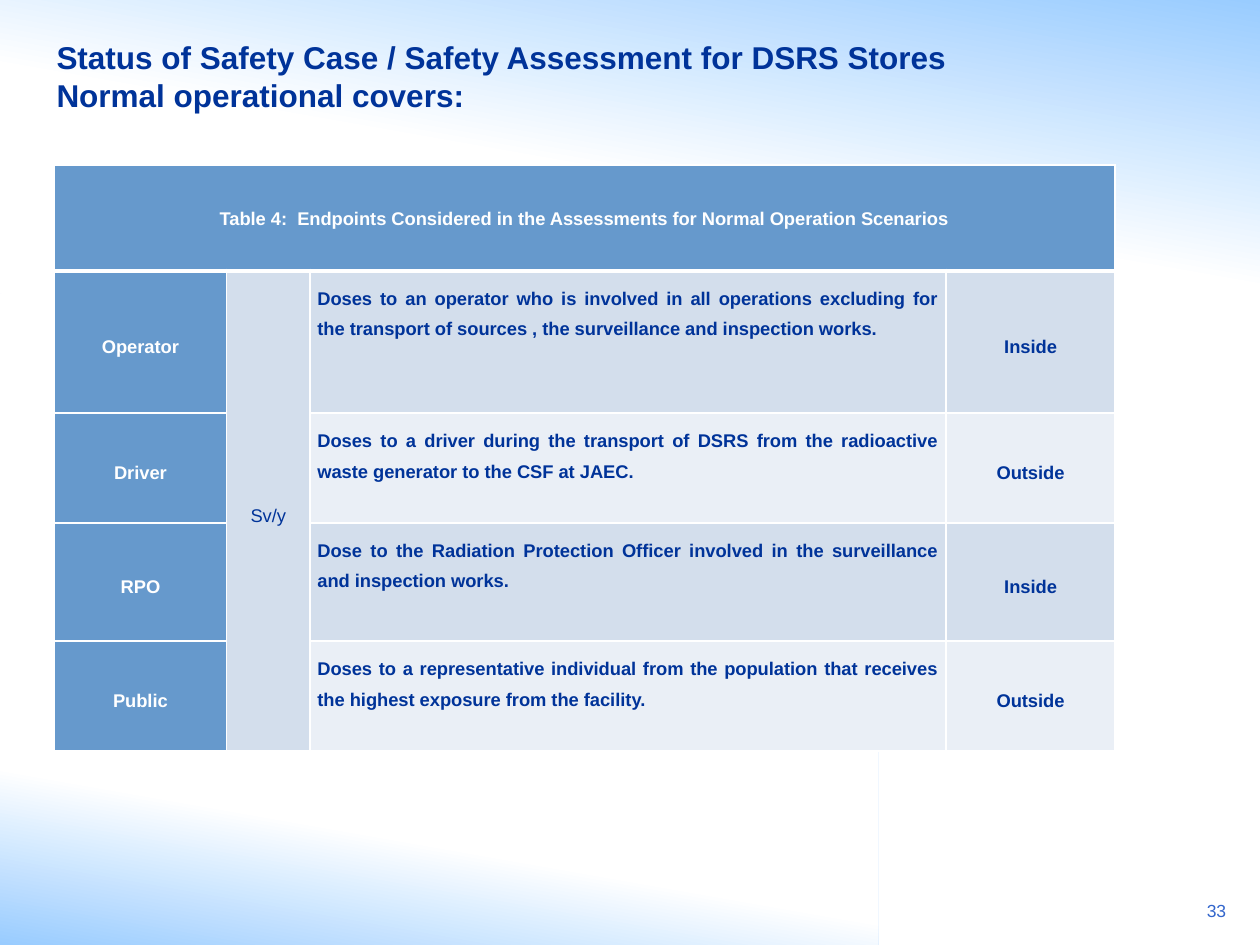
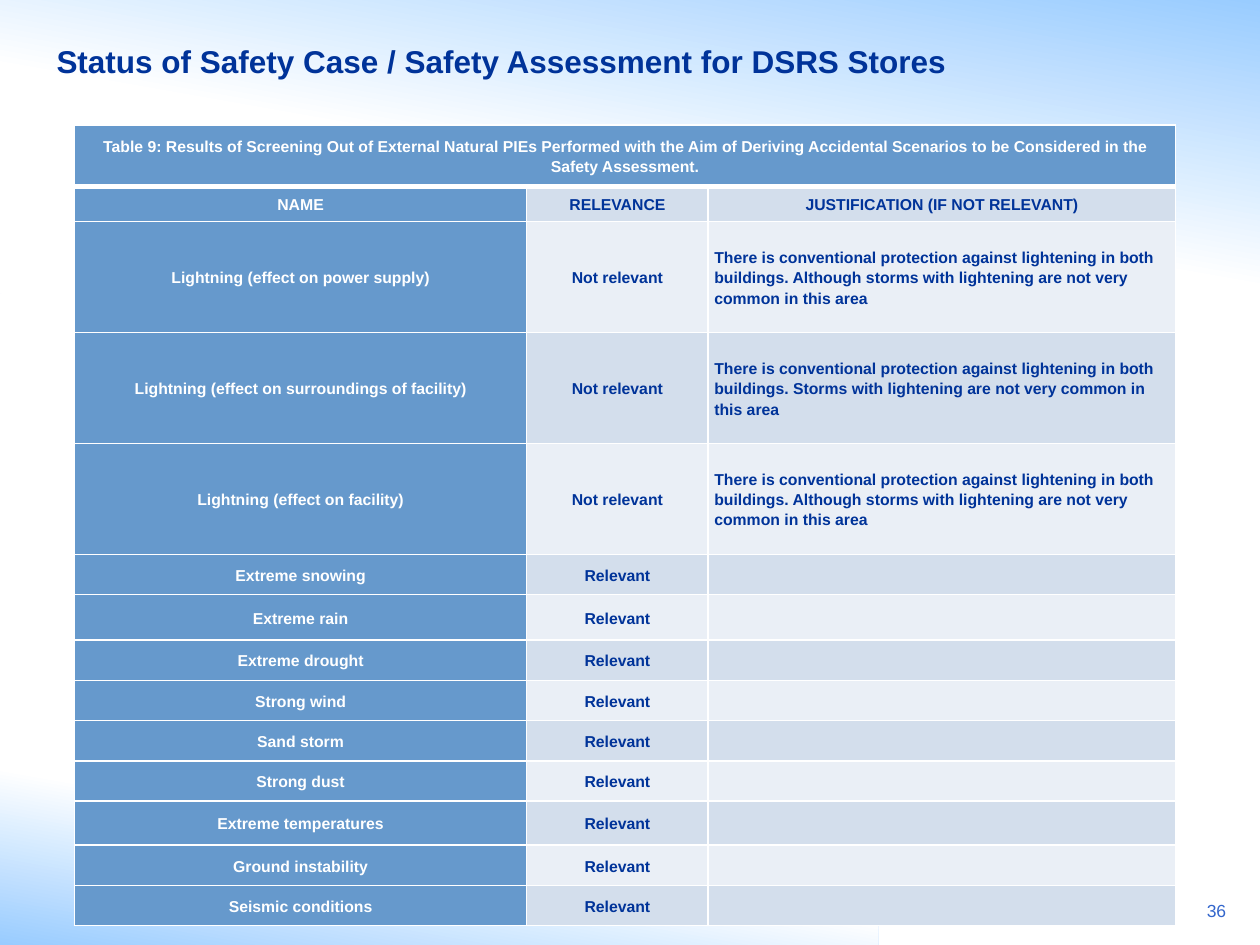
"""Build two slides of safety assessment tables."""
from dataclasses import dataclass

from lxml.etree import SubElement
from pptx import Presentation
from pptx.dml.color import RGBColor
from pptx.enum.shapes import MSO_SHAPE
from pptx.enum.text import MSO_ANCHOR, PP_ALIGN
from pptx.oxml.ns import qn
from pptx.slide import Slide
from pptx.table import _Cell
from pptx.util import Inches, Pt

FONT = "Arial"
COLORS = {
    "sky": "99CCFF",
    "white": "FFFFFF",
    "navy": "003399",
    "number": "3366CC",
    "header": "6699CC",
    "band_dark": "D3DEEC",
    "band_light": "EAEFF6",
}
TITLE = "Status of Safety Case / Safety Assessment for DSRS Stores"


@dataclass(frozen=True)
class Band:
    top: float
    width: float
    height: float
    angle: float
    fade_end: float


@dataclass(frozen=True)
class TextStyle:
    size: float
    color: str = "navy"
    bold: bool = True
    align: PP_ALIGN = PP_ALIGN.CENTER
    spacing: float = 1.0


@dataclass(frozen=True)
class Column:
    width: float
    align: PP_ALIGN = PP_ALIGN.CENTER
    anchor: MSO_ANCHOR = MSO_ANCHOR.MIDDLE
    bold: bool = True


@dataclass(frozen=True)
class TableSpec:
    left: float
    top: float
    caption: str
    columns: list[Column]
    heights: list[float]
    rows: list[tuple[str, ...]]
    size: float
    spacing: float
    inset: float
    tall_column: int | None = None


@dataclass(frozen=True)
class Page:
    number: int
    title: str
    title_top: float
    table: TableSpec


BANDS = [Band(5.8, 6.97, 1.7, 80, 0.48), Band(0, 10, 2.33, 260, 0.56)]

ENDPOINTS = TableSpec(
    0.43, 1.31,
    "Table 4:  Endpoints Considered in the Assessments for Normal Operation Scenarios",
    [
        Column(1.37),
        Column(0.66, bold=False),
        Column(5.05, PP_ALIGN.JUSTIFY, MSO_ANCHOR.TOP),
        Column(1.34),
    ],
    [0.84, 1.13, 0.87, 0.94, 0.87],
    [
        ("Operator", "Sv/y",
         "Doses to an operator who is involved in all operations excluding for the "
         "transport of sources , the surveillance and inspection works.", "Inside"),
        ("Driver", "",
         "Doses to a driver during the transport of DSRS from the radioactive "
         "waste generator to the CSF at JAEC.", "Outside"),
        ("RPO", "",
         "Dose to the Radiation Protection Officer involved in the surveillance "
         "and inspection works.", "Inside"),
        ("Public", "",
         "Doses to a representative individual from the population that receives "
         "the highest exposure from the facility.", "Outside"),
    ],
    size=10.5, spacing=1.5, inset=0.06, tall_column=1,
)

PROTECTION = "There is conventional protection against lightening in both buildings. "
ALTHOUGH = PROTECTION + "Although storms with lightening are not very common in this area"
STORMS = PROTECTION + "Storms with lightening are not very common in this area"
LIGHTNING = [("power supply", ALTHOUGH), ("surroundings of facility", STORMS),
             ("facility", ALTHOUGH)]
RELEVANT = [
    "Extreme snowing", "Extreme rain", "Extreme drought", "Strong wind", "Sand storm",
    "Strong dust", "Extreme temperatures", "Ground instability", "Seismic conditions",
]

SCREENING = TableSpec(
    0.59, 0.99,
    "Table 9: Results of Screening Out of External Natural PIEs Performed with the Aim "
    "of Deriving Accidental Scenarios to be Considered in the Safety Assessment.",
    [Column(3.59), Column(1.44), Column(3.71, PP_ALIGN.LEFT)],
    [0.49, 0.28] + [0.88] * 3 + [0.32, 0.36] + [0.32] * 4 + [0.35] + [0.32] * 2,
    [("NAME", "RELEVANCE", "JUSTIFICATION (IF NOT RELEVANT)")]
    + [(f"Lightning (effect on {target})", "Not relevant", reason)
       for target, reason in LIGHTNING]
    + [(name, "Relevant", "") for name in RELEVANT],
    size=9, spacing=1.15, inset=0.05,
)

PAGES = [
    Page(33, TITLE + "\vNormal operational covers:", 0.13, ENDPOINTS),
    Page(36, TITLE, 0.01, SCREENING),
]


def rgb(name: str) -> RGBColor:
    """Return a named colour."""
    return RGBColor.from_string(COLORS[name])


def write(tf, text: str, style: TextStyle) -> None:
    """Put one styled paragraph in a text frame."""
    p = tf.paragraphs[0]
    p.text = text
    p.alignment = style.align
    p.line_spacing = style.spacing
    p.font.name = FONT
    p.font.size = Pt(style.size)
    p.font.bold = style.bold
    p.font.color.rgb = rgb(style.color)
    if not text:
        SubElement(p._p, qn("a:endParaRPr"), sz=str(int(style.size * 100)))


def add_band(s: Slide, band: Band) -> None:
    """Draw a background band that fades to white."""
    sp = s.shapes.add_shape(MSO_SHAPE.RECTANGLE, 0, Inches(band.top),
                            Inches(band.width), Inches(band.height))
    sp.shadow.inherit = False
    sp.line.fill.background()
    sp.fill.gradient()
    sp.fill.gradient_angle = band.angle
    stops = zip(sp.fill.gradient_stops, (0, band.fade_end), ("sky", "white"))
    for stop, position, color in stops:
        stop.position = position
        stop.color.rgb = rgb(color)


def add_text(s: Slide, text: str, box: tuple[float, float, float, float],
             style: TextStyle, anchor: MSO_ANCHOR) -> None:
    """Add a wrapped text box."""
    tf = s.shapes.add_textbox(*map(Inches, box)).text_frame
    tf.word_wrap = True
    tf.vertical_anchor = anchor
    write(tf, text, style)


def set_borders(cell: _Cell, top: float, bottom: float) -> None:
    """Give a cell white borders with the given top and bottom widths."""
    tcPr = cell._tc.get_or_add_tcPr()
    for tag, width in (("lnL", 1), ("lnR", 1), ("lnT", top), ("lnB", bottom)):
        ln = SubElement(tcPr, qn(f"a:{tag}"), w=str(Pt(width)))
        fill = SubElement(ln, qn("a:solidFill"))
        SubElement(fill, qn("a:srgbClr"), val=COLORS["white"])


def fill_cell(cell: _Cell, text: str, fill: str, style: TextStyle,
              anchor: MSO_ANCHOR, inset: float) -> None:
    """Set the text, margins and fill of a cell."""
    cell.margin_left = cell.margin_right = Inches(inset)
    cell.margin_top = cell.margin_bottom = Inches(inset)
    cell.vertical_anchor = anchor
    cell.fill.solid()
    cell.fill.fore_color.rgb = rgb(fill)
    write(cell.text_frame, text, style)


def add_table(s: Slide, spec: TableSpec) -> None:
    """Draw a captioned table with banded rows."""
    n_rows, n_cols = len(spec.heights), len(spec.columns)
    width = sum(col.width for col in spec.columns)
    table = s.shapes.add_table(n_rows, n_cols, Inches(spec.left), Inches(spec.top),
                               Inches(width), Inches(sum(spec.heights))).table
    for row, height in zip(table.rows, spec.heights):
        row.height = Inches(height)
    for column, col in zip(table.columns, spec.columns):
        column.width = Inches(col.width)

    captions = (spec.caption,) + ("",) * (n_cols - 1)
    for i, texts in enumerate([captions] + spec.rows):
        band = "band_dark" if i % 2 else "band_light"
        for j, (text, col) in enumerate(zip(texts, spec.columns)):
            cell = table.cell(i, j)
            set_borders(cell, 3 if i == 1 else 1, 3 if i == 0 else 1)
            is_header = i == 0 or j == 0
            is_heading = i == 0 or text.isupper()
            style = TextStyle(
                spec.size,
                "white" if is_header else "navy",
                col.bold or i == 0,
                PP_ALIGN.CENTER if is_heading else col.align,
                1.15 if i == 0 else spec.spacing,
            )
            fill = "header" if is_header else band
            if i and j == spec.tall_column:
                fill = "band_dark"
            anchor = MSO_ANCHOR.MIDDLE if is_heading else col.anchor
            fill_cell(cell, text, fill, style, anchor, spec.inset)

    table.cell(0, 0).merge(table.cell(0, n_cols - 1))
    if spec.tall_column is not None:
        table.cell(1, spec.tall_column).merge(table.cell(n_rows - 1, spec.tall_column))


def add_page(prs: Presentation, page: Page) -> None:
    """Add one slide with its background, title, number and table."""
    s = prs.slides.add_slide(prs.slide_layouts[6])
    for band in BANDS:
        add_band(s, band)
    add_text(s, page.title, (0.35, page.title_top, 7.48, 0.94),
             TextStyle(18, align=PP_ALIGN.LEFT), MSO_ANCHOR.MIDDLE)
    add_text(s, str(page.number), (9.27, 7.09, 0.56, 0.32),
             TextStyle(10, "number", False, PP_ALIGN.RIGHT), MSO_ANCHOR.TOP)
    add_table(s, page.table)


def main() -> None:
    """Build and save the presentation."""
    prs = Presentation()
    prs.slide_width, prs.slide_height = Inches(10), Inches(7.5)
    for page in PAGES:
        add_page(prs, page)
    prs.save("out.pptx")


if __name__ == "__main__":
    main()
